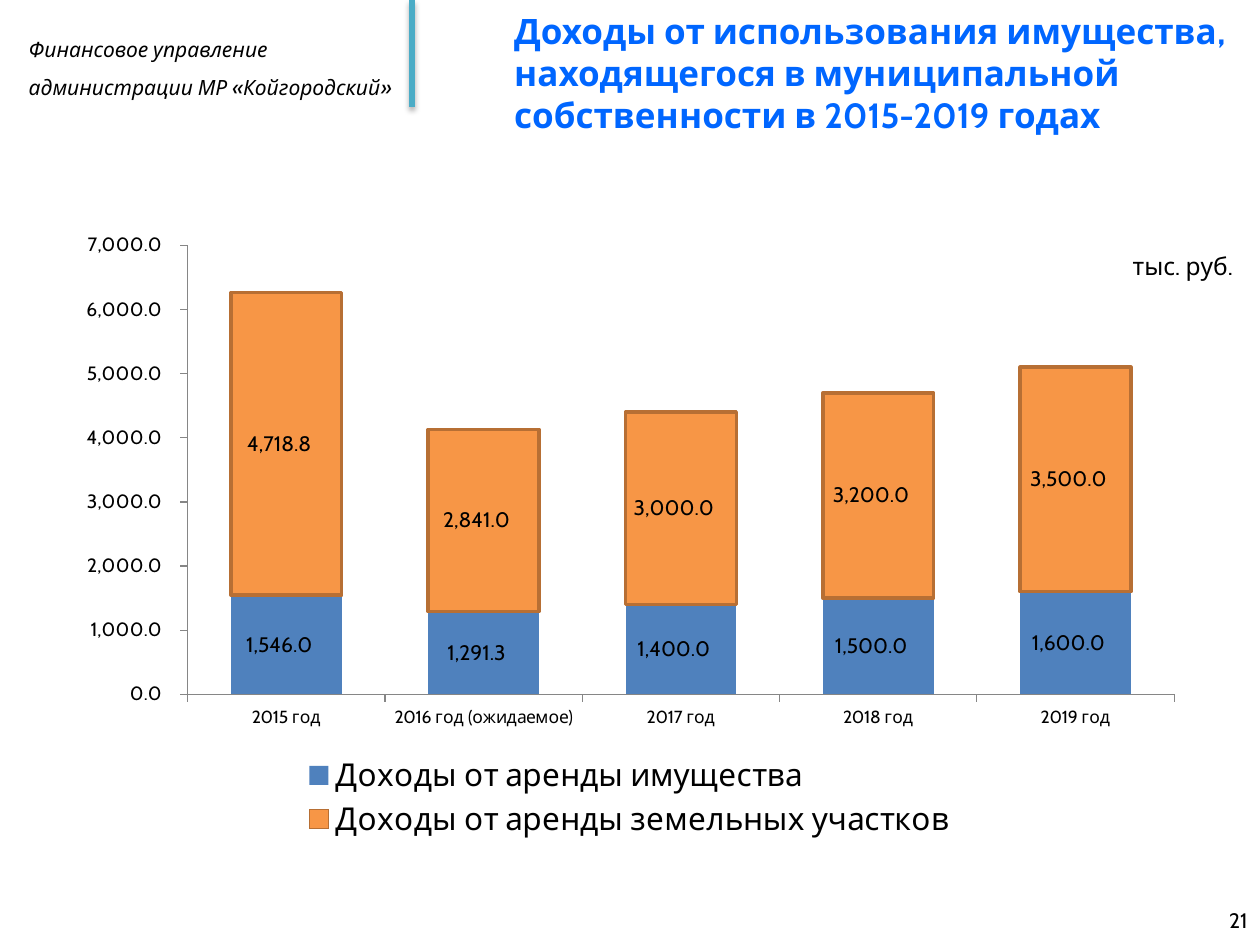
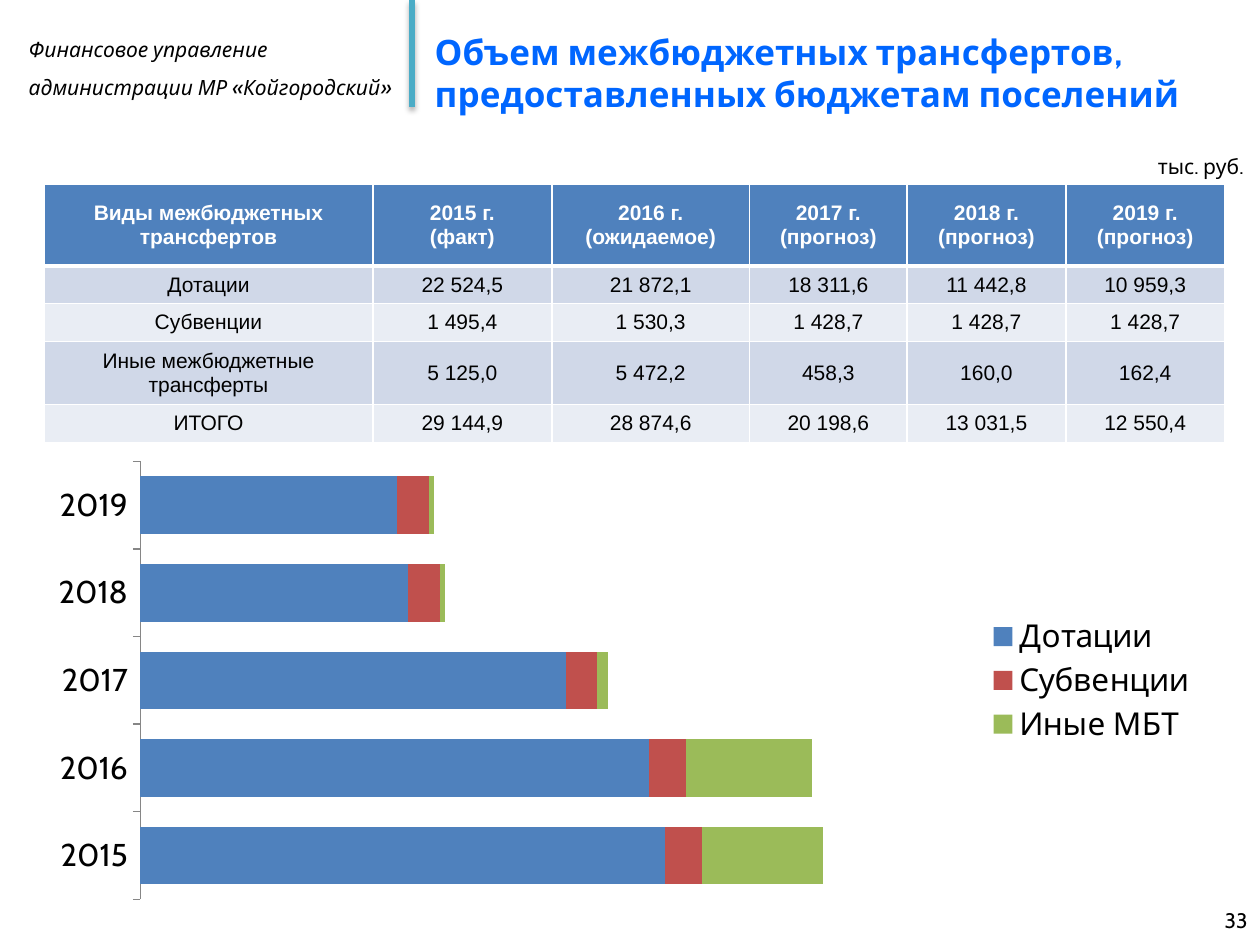
import pptx
import pptx.util
import pptx.dml.color
import pptx.chart.data
import pptx.enum.chart
import pptx.enum.shapes
import pptx.enum.text
import pptx.oxml
import pptx.oxml.ns

Inches = pptx.util.Inches
Pt = pptx.util.Pt
ALIGN = pptx.enum.text.PP_ALIGN
ANCHOR = pptx.enum.text.MSO_ANCHOR
CHART = pptx.enum.chart.XL_CHART_TYPE
LEGEND = pptx.enum.chart.XL_LEGEND_POSITION
TICK = pptx.enum.chart.XL_TICK_MARK
qn = pptx.oxml.ns.qn

FONT = "Cabin"
BLACK, WHITE, TITLE, TEAL, AXIS = "000000", "FFFFFF", "0066FF", "4BACC6", "868686"
BLUE, ORANGE, BROWN, RED, GREEN = "4F81BD", "F79646", "B76F34", "C0504D", "9BBB59"
BANDS = ("D0D8E8", "E9EDF4")
NUMBER = "#,##0.0_р_."
UNIT = "тыс. руб."


def rgb(color):
    return pptx.dml.color.RGBColor.from_string(color)


def xml(text):
    root, rest = text.split(" ", 1)
    ns = pptx.oxml.ns.nsdecls("a", "c")
    return pptx.oxml.parse_xml(f"{root} {ns} {rest}")


def style(font, size, color=BLACK, name=FONT, **values):
    values.update(size=Pt(size), name=name)
    for key, value in values.items():
        setattr(font, key, value)
    font.color.rgb = rgb(color)


def fill(target, color):
    target.fill.solid()
    target.fill.fore_color.rgb = rgb(color)


def place(shape, box):
    for key, value in zip(("left", "top", "width", "height"), box):
        setattr(shape, key, Inches(value))


def add_text(s, box, text, size, align=ALIGN.LEFT, anchor=ANCHOR.TOP,
             wrap=True, spacing=None, **values):
    tf = s.shapes.add_textbox(*map(Inches, box)).text_frame
    tf.word_wrap = wrap
    tf.vertical_anchor = anchor
    tf.text = text
    for p in tf.paragraphs:
        p.alignment = align
        p.line_spacing = spacing
        for r in p.runs:
            style(r.font, size, **values)


def add_divider(s):
    line = s.shapes.add_connector(
        pptx.enum.shapes.MSO_CONNECTOR.STRAIGHT,
        Inches(3.27), Inches(0), Inches(3.27), Inches(0.85))
    line.line.color.rgb = rgb(TEAL)
    line.line.width = Pt(3)
    line._element.spPr.append(xml(
        f'<a:effectLst ><a:outerShdw blurRad="{Pt(3.1)}" dist="{Pt(1.8)}" '
        'dir="5400000" rotWithShape="0"><a:srgbClr val="000000">'
        '<a:alpha val="35000"/></a:srgbClr></a:outerShdw></a:effectLst>'))


def add_slide(prs, title, title_left, number):
    s = prs.slides.add_slide(prs.slide_layouts[5])
    add_text(s, (0.13, 0.14, 3.14, 0.71),
             "Финансовое управление\nадминистрации МР «Койгородский»",
             12, spacing=1.5, italic=True)
    add_divider(s)
    place(s.shapes.title, (title_left, 0, 10 - title_left, 1.15))
    tf = s.shapes.title.text_frame
    tf.text = title
    tf.word_wrap = True
    tf.auto_size = pptx.enum.text.MSO_AUTO_SIZE.NONE
    tf.vertical_anchor = ANCHOR.MIDDLE
    p = tf.paragraphs[0]
    p.alignment = ALIGN.LEFT
    style(p.runs[0].font, 20, TITLE, bold=True)
    add_text(s, (7.67, 7.1, 2.33, 0.4), str(number), 12, ALIGN.RIGHT, ANCHOR.MIDDLE)
    return s


def set_layout(parent, index, box, inner=False):
    for old in parent.findall(qn("c:layout")):
        parent.remove(old)
    target = '<c:layoutTarget val="inner"/>' if inner else ""
    modes = "".join(f'<c:{k}Mode val="edge"/>' for k in "xy")
    sizes = "".join(f'<c:{k} val="{v}"/>' for k, v in zip("xywh", box))
    parent.insert(index, xml(
        f"<c:layout ><c:manualLayout>{target}{modes}{sizes}</c:manualLayout></c:layout>"))


def style_axis(axis, size):
    axis.has_major_gridlines = False
    axis.major_tick_mark = TICK.OUTSIDE
    axis.minor_tick_mark = TICK.NONE
    axis.format.line.color.rgb = rgb(AXIS)
    style(axis.tick_labels.font, size)


def add_stacked_chart(s, kind, box, cats, series, gap, legend, cat_size,
                      top, plot_box, legend_box):
    data = pptx.chart.data.CategoryChartData()
    data.categories = cats
    for name, values, color in series:
        data.add_series(name, values)
    chart = s.shapes.add_chart(kind, *map(Inches, box), data).chart
    chart.has_title = False
    style(chart.font, 18)
    chart.has_legend = True
    chart.legend.position = legend
    chart.legend.include_in_layout = False
    style(chart.legend.font, 18)
    plot = chart.plots[0]
    plot.gap_width = gap
    plot.overlap = 100
    plot.vary_by_categories = False
    for ser, (name, values, color) in zip(plot.series, series):
        fill(ser.format, color)
    style_axis(chart.category_axis, cat_size)
    style_axis(chart.value_axis, 11)
    chart.value_axis.minimum_scale = 0
    chart.value_axis.maximum_scale = top
    set_layout(chart._chartSpace.chart.plotArea, 0, plot_box, inner=True)
    set_layout(chart.legend._element, 1, legend_box)
    return chart


def add_value_labels(chart):
    for ser in chart.plots[0].series:
        labels = ser.data_labels
        labels.show_value = True
        labels.number_format = NUMBER
        labels.number_format_is_linked = False
        style(labels.font, 12)


def set_borders(cell, top, bottom):
    tcPr = cell._tc.get_or_add_tcPr()
    for i, (side, width) in enumerate(zip("LRTB", (1, 1, top, bottom))):
        tcPr.insert(i, xml(
            f'<a:ln{side} w="{Pt(width)}"><a:solidFill><a:srgbClr val="{WHITE}"/>'
            f"</a:solidFill></a:ln{side}>"))


def add_table(s, box, widths, heights, rows):
    table = s.shapes.add_table(len(rows), len(widths), *map(Inches, box)).table
    for column, width in zip(table.columns, widths):
        column.width = Inches(width)
    for i, (row, height) in enumerate(zip(rows, heights)):
        table.rows[i].height = Inches(height)
        header = i == 0
        for j, text in enumerate(row):
            cell = table.cell(i, j)
            cell.text = text
            cell.vertical_anchor = ANCHOR.MIDDLE
            fill(cell, BLUE if header else BANDS[(i - 1) % 2])
            set_borders(cell, 3 if i == 1 else 1, 3 if header else 1)
            for p in cell.text_frame.paragraphs:
                p.alignment = ALIGN.CENTER
                for r in p.runs:
                    style(r.font, 12, WHITE if header else BLACK, "Arial", bold=header)


def add_income_slide(prs):
    s = add_slide(prs, "Доходы от использования имущества, находящегося в "
                  "муниципальной собственности в 2015-2019 годах", 3.98, 21)
    chart = add_stacked_chart(
        s, CHART.COLUMN_STACKED, (0.5, 1.75, 9, 4.95),
        ["2015 год", "2016 год (ожидаемое)", "2017 год", "2018 год", "2019 год"],
        [("Доходы от аренды имущества", (1546, 1291.3, 1400, 1500, 1600), BLUE),
         ("Доходы от аренды земельных участков",
          (4718.8, 2841, 3000, 3200, 3500), ORANGE)],
        78, LEGEND.BOTTOM, 10, 7000,
        (0.11, 0.04, 0.87, 0.72), (0.21, 0.85, 0.58, 0.15))
    labels = chart.value_axis.tick_labels
    labels.number_format = NUMBER
    labels.number_format_is_linked = False
    chart.value_axis.major_unit = 1000
    outline = chart.plots[0].series[1].format.line
    outline.color.rgb = rgb(BROWN)
    outline.width = Pt(2)
    add_value_labels(chart)
    add_text(s, (8.89, 1.94, 1.02, 0.34), UNIT, 14)


def add_transfers_slide(prs):
    s = add_slide(prs, "Объем межбюджетных трансфертов, предоставленных "
                  "бюджетам поселений", 3.35, 33)
    add_table(
        s, (0.35, 1.46, 9.37, 2.05), (2.61, 1.42, 1.57, 1.25, 1.26, 1.26),
        (0.65, 0.29, 0.3, 0.39, 0.29),
        [("Виды межбюджетных трансфертов", "2015 г.\n(факт)", "2016 г.\n(ожидаемое)",
          "2017 г.\n(прогноз)", "2018 г.\n(прогноз)", "2019 г.\n(прогноз)"),
         ("Дотации", "22 524,5", "21 872,1", "18 311,6", "11 442,8", "10 959,3"),
         ("Субвенции", "1 495,4", "1 530,3", "1 428,7", "1 428,7", "1 428,7"),
         ("Иные межбюджетные трансферты", "5 125,0", "5 472,2", "458,3", "160,0", "162,4"),
         ("ИТОГО", "29 144,9", "28 874,6", "20 198,6", "13 031,5", "12 550,4")])
    add_text(s, (9.08, 1.17, 0.9, 0.3), UNIT, 12, ALIGN.CENTER, wrap=False)
    chart = add_stacked_chart(
        s, CHART.BAR_STACKED, (0.28, 3.59, 9.26, 3.62),
        [str(year) for year in range(2015, 2020)],
        [("Дотации", (100, 97, 81, 51, 49), BLUE),
         ("Субвенции", (7, 7, 6, 6, 6), RED),
         ("Иные МБТ", (23, 24, 2, 1, 1), GREEN)],
        52, LEGEND.RIGHT, 18, 140,
        (0.09, 0.02, 0.63, 0.96), (0.81, 0.35, 0.19, 0.3))
    chart.value_axis.visible = False


def main():
    prs = pptx.Presentation()
    prs.slide_width, prs.slide_height = Inches(10), Inches(7.5)
    add_income_slide(prs)
    add_transfers_slide(prs)
    prs.save("out.pptx")


if __name__ == "__main__":
    main()
